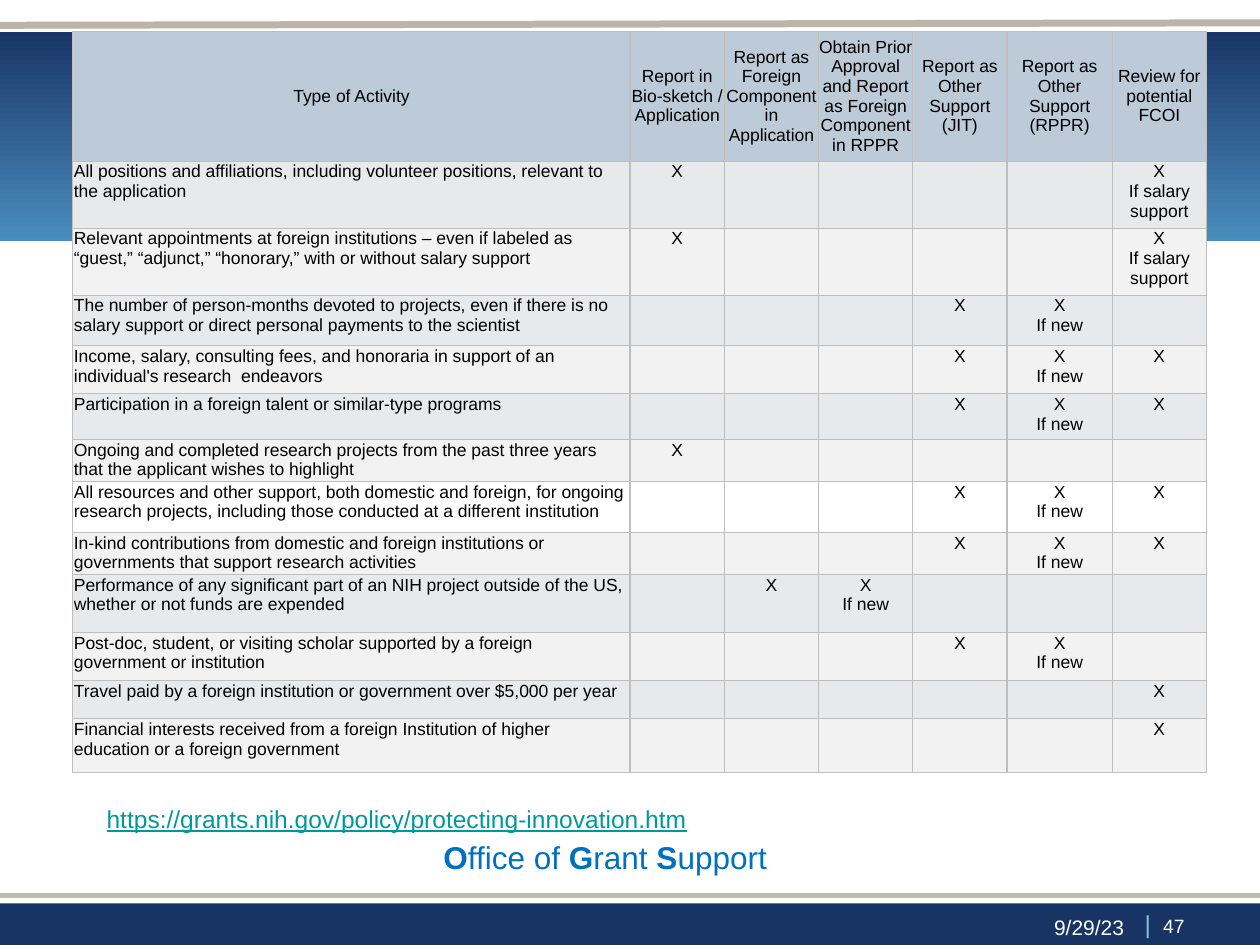
import lxml.etree
import pptx
import pptx.dml.color
import pptx.enum.shapes
import pptx.enum.text
import pptx.oxml
import pptx.oxml.ns
import pptx.util
from dataclasses import dataclass

Cm = pptx.util.Cm
Pt = pptx.util.Pt
Align = pptx.enum.text.PP_ALIGN
Anchor = pptx.enum.text.MSO_ANCHOR


@dataclass(frozen=True)
class Theme:
    font: str = "Arial"
    navy: str = "183465"
    band_top: str = "193567"
    band_bottom: str = "498DBD"
    top_rule: str = "BCB3A9"
    bottom_rule: str = "BBBCA9"
    border: str = "BEBEBE"
    header: str = "BDCAD7"
    dark: str = "E7E9EA"
    light: str = "F2F2F2"
    white: str = "FFFFFF"
    black: str = "000000"
    link: str = "009999"
    office: str = "0070C0"
    divider: str = "8FBEDC"
    table_size: float = 10
    number_size: float = 11
    date_size: float = 12
    body_size: float = 14
    office_size: float = 18


THEME = Theme()
SLIDE_WIDTH, SLIDE_HEIGHT = 25.4, 19.05

HEADERS = [
    "Type of Activity",
    "Report in Bio-sketch / Application",
    "Report as Foreign Component in Application",
    "Obtain Prior Approval and Report as Foreign Component in RPPR",
    "Report as Other Support (JIT)",
    "Report as Other Support (RPPR)",
    "Review for potential FCOI",
]
COLUMN_WIDTHS = [11.23, 1.9, 1.9, 1.9, 1.9, 2.12, 1.9]
HEADER_HEIGHT = 2.62
BIOSKETCH, FOREIGN, PRIOR, JIT, RPPR, FCOI = range(1, 7)

MARK, IF_NEW, IF_SALARY = "X", "X\nIf new", "X\nIf salary support"
SUPPORT = {JIT: MARK, RPPR: IF_NEW}
SUPPORT_AND_FCOI = {**SUPPORT, FCOI: MARK}

# activity, marks by column, row height, fill
ACTIVITIES = [
    ("All positions and affiliations, including volunteer positions, relevant to the application",
     {BIOSKETCH: MARK, FCOI: IF_SALARY}, 1.35, THEME.dark),
    ("Relevant appointments at foreign institutions – even if labeled as “guest,” “adjunct,” "
     "“honorary,” with or without salary support",
     {BIOSKETCH: MARK, FCOI: IF_SALARY}, 1.35, THEME.light),
    ("The number of person-months devoted to projects, even if there is no salary support "
     "or direct personal payments to the scientist", SUPPORT, 1.02, THEME.dark),
    ("Income, salary, consulting fees, and honoraria in support of an individual's "
     "research  endeavors", SUPPORT_AND_FCOI, 0.97, THEME.light),
    ("Participation in a foreign talent or similar-type programs",
     SUPPORT_AND_FCOI, 0.92, THEME.dark),
    ("Ongoing and completed research projects from the past three years that the applicant "
     "wishes to highlight", {BIOSKETCH: MARK}, 0.85, THEME.light),
    ("All resources and other support, both domestic and foreign, for ongoing research "
     "projects, including those conducted at a different institution",
     SUPPORT_AND_FCOI, 1.02, THEME.white),
    ("In-kind contributions from domestic and foreign institutions or governments that "
     "support research activities", SUPPORT_AND_FCOI, 0.85, THEME.light),
    ("Performance of any significant part of an NIH project outside of the US, whether or "
     "not funds are expended", {FOREIGN: MARK, PRIOR: IF_NEW}, 1.17, THEME.dark),
    ("Post-doc, student, or visiting scholar supported by a foreign government or institution",
     SUPPORT, 0.97, THEME.light),
    ("Travel paid by a foreign institution or government over $5,000 per year",
     {FCOI: MARK}, 0.77, THEME.dark),
    ("Financial interests received from a foreign Institution of higher education or a "
     "foreign government", {FCOI: MARK}, 1.09, THEME.light),
]

LINK = "https://grants.nih.gov/policy/protecting-innovation.htm"
OFFICE = [("O", True), ("ffice of ", False), ("G", True), ("rant ", False),
          ("S", True), ("upport", False)]
DATE, PAGE_NUMBER = "9/29/23", "47"


def rgb(value):
    return pptx.dml.color.RGBColor.from_string(value)


def add_span(para, text, size, color, bold=False, underline=False):
    span = para.add_run()
    span.text = text
    font = span.font
    font.name, font.size, font.bold = THEME.font, Pt(size), bold
    font.color.rgb = rgb(color)
    if underline:
        font.underline = True


def add_box(page, left, top, width, height, spans, align=Align.LEFT, wrap=True):
    box = page.shapes.add_textbox(Cm(left), Cm(top), Cm(width), Cm(height))
    box.text_frame.word_wrap = wrap
    para = box.text_frame.paragraphs[0]
    para.alignment = align
    for span in spans:
        add_span(para, *span)


def add_band(page, top, height):
    band = page.shapes.add_shape(pptx.enum.shapes.MSO_SHAPE.RECTANGLE,
                                 0, Cm(top), Cm(SLIDE_WIDTH), Cm(height))
    band.shadow.inherit = False
    band.line.fill.background()
    return band


def add_rule(page, start, end, color, weight):
    rule = page.shapes.add_connector(pptx.enum.shapes.MSO_CONNECTOR.STRAIGHT,
                                     0, Cm(start), Cm(SLIDE_WIDTH), Cm(end))
    rule.line.color.rgb = rgb(color)
    rule.line.width = Pt(weight)
    lxml.etree.SubElement(rule._element.spPr, pptx.oxml.ns.qn("a:effectLst"))


def add_borders(cell):
    properties = cell._tc.get_or_add_tcPr()
    for side in ("lnL", "lnR", "lnT", "lnB"):
        properties.append(pptx.oxml.parse_xml(
            f'<a:{side} {pptx.oxml.ns.nsdecls("a")} w="{Pt(0.75)}"><a:solidFill>'
            f'<a:srgbClr val="{THEME.border}"/></a:solidFill></a:{side}>'))


def fill_cell(cell, text, fill, align, anchor, inset):
    add_borders(cell)
    cell.fill.solid()
    cell.fill.fore_color.rgb = rgb(fill)
    cell.vertical_anchor = anchor
    cell.margin_left = cell.margin_right = cell.margin_top = cell.margin_bottom = Cm(inset)
    para = cell.text_frame.paragraphs[0]
    para.alignment = align
    for index, line in enumerate(text.split("\n") if text else []):
        if index:
            para.add_line_break()
        add_span(para, line, THEME.table_size, THEME.black)
    # Keeps empty cells from stretching their row.
    lxml.etree.SubElement(para._p, pptx.oxml.ns.qn("a:endParaRPr"),
                          sz=str(THEME.table_size * 100))


def add_activity_table(page):
    heights = [HEADER_HEIGHT] + [height for _, _, height, _ in ACTIVITIES]
    table = page.shapes.add_table(len(heights), len(HEADERS), Cm(1.47), Cm(0.63),
                                  Cm(sum(COLUMN_WIDTHS)), Cm(sum(heights))).table
    table.first_row = table.horz_banding = False
    for column, width in zip(table.columns, COLUMN_WIDTHS):
        column.width = Cm(width)
    for row, height in zip(table.rows, heights):
        row.height = Cm(height)
    for column, text in enumerate(HEADERS):
        fill_cell(table.cell(0, column), text, THEME.header, Align.CENTER, Anchor.MIDDLE, 0)
    for row, (activity, marks, _, fill) in enumerate(ACTIVITIES, start=1):
        for column, text in enumerate([activity] + [marks.get(c, "") for c in range(1, 7)]):
            align = Align.CENTER if column else Align.LEFT
            fill_cell(table.cell(row, column), text, fill, align, Anchor.TOP, 0.02)


def main():
    deck = pptx.Presentation()
    deck.slide_width, deck.slide_height = Cm(SLIDE_WIDTH), Cm(SLIDE_HEIGHT)
    page = deck.slides.add_slide(deck.slide_layouts[6])

    footer = add_band(page, 18.21, 0.84)
    footer.fill.solid()
    footer.fill.fore_color.rgb = rgb(THEME.navy)
    add_rule(page, 18.05, 18.05, THEME.bottom_rule, 3)
    banner = add_band(page, 0.64, 4.23)
    banner.fill.gradient()
    banner.fill.gradient_angle = 270
    for stop, color in zip(banner.fill.gradient_stops, (THEME.band_top, THEME.band_bottom)):
        stop.color.rgb = rgb(color)
    add_rule(page, 0.51, 0.46, THEME.top_rule, 4)

    add_activity_table(page)
    add_box(page, 22.23, 18.21, 1.9, 0.84,
            [("| ", THEME.body_size, THEME.divider), (" ", THEME.number_size, THEME.black),
             (PAGE_NUMBER, THEME.number_size, THEME.white)], Align.RIGHT)
    add_box(page, 15.77, 18.31, 7.14, 0.74,
            [(DATE, THEME.date_size, THEME.white)], Align.RIGHT)
    add_box(page, 1.9, 16.08, 12.9, 0.86,
            [(LINK, THEME.body_size, THEME.link, False, True)])
    add_box(page, 8.69, 16.76, 7.09, 1.02,
            [(text, THEME.office_size, THEME.office, bold) for text, bold in OFFICE], wrap=False)
    deck.save("out.pptx")


if __name__ == "__main__":
    main()
